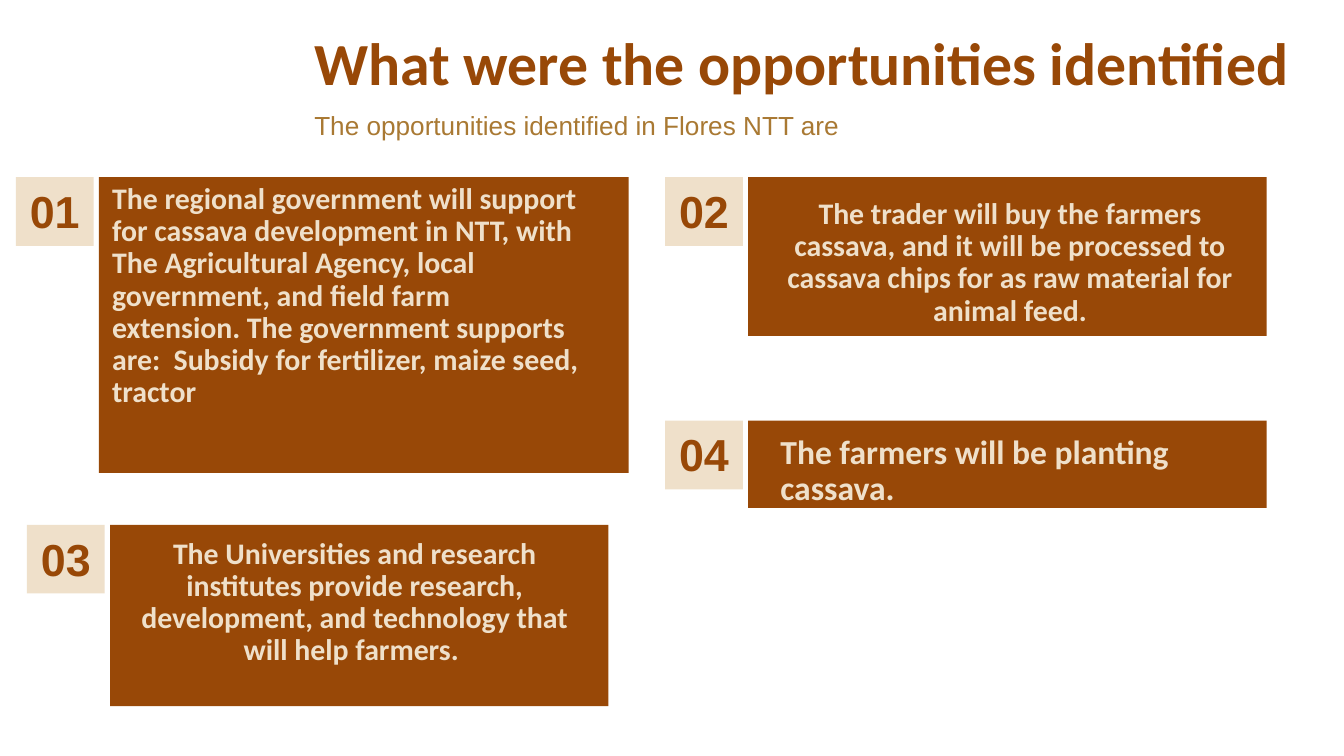
"""Build the slide of opportunities identified in Flores NTT."""
from pptx import Presentation
from pptx.dml.color import RGBColor
from pptx.enum.shapes import MSO_SHAPE
from pptx.enum.text import MSO_ANCHOR, PP_ALIGN
from pptx.util import Cm, Pt

RECTANGLE = MSO_SHAPE.RECTANGLE
MIDDLE, TOP = MSO_ANCHOR.MIDDLE, MSO_ANCHOR.TOP
LEFT, CENTER = PP_ALIGN.LEFT, PP_ALIGN.CENTER
BROWN = RGBColor(0x98, 0x48, 0x07)
CREAM = RGBColor(0xEF, 0xE0, 0xCA)
GOLD = RGBColor(0xA9, 0x79, 0x33)

TITLE = "What were the opportunities identified"
SUBTITLE = "The opportunities identified in Flores NTT are"
BADGE_WIDTH, BADGE_HEIGHT, PANEL_OFFSET = 1.47, 1.3, 1.57

# number, corner, panel size, text offset, text size, alignment, points, wording
CARDS = [
    ("01", (0.3, 3.35), (10.01, 5.59), (0, 0), (9.42, 4.57), LEFT, 16,
     "The regional government will support for cassava development in NTT, "
     "with The Agricultural Agency, local government, and field farm extension. "
     "The government supports are:  Subsidy for fertilizer, maize seed, tractor"),
    ("02", (12.57, 3.35), (9.8, 3), (0.15, 0.28), (9.6, 2.72), CENTER, 16,
     "The trader will buy the farmers cassava, and it will be processed to "
     "cassava chips for as raw material for animal feed."),
    ("03", (0.51, 9.92), (9.42, 3.43), (0, 0.13), (9.25, 2.72), CENTER, 16,
     "The Universities and research institutes provide research, development, "
     "and technology that will help farmers. "),
    ("04", (12.57, 7.95), (9.8, 1.65), (0.36, 0.15), (9.6, 1.65), LEFT, 18,
     "The farmers will be planting cassava."),
]


def write(shape, text, font, size, color, bold=True, align=LEFT, anchor=TOP, spacing=1.0):
    frame = shape.text_frame
    frame.word_wrap = True
    frame.vertical_anchor = anchor
    frame.text = text
    para = frame.paragraphs[0]
    para.alignment = align
    para.line_spacing = spacing
    para.space_before = Pt(0)
    para.font.name = font
    para.font.size = Pt(size)
    para.font.bold = bold
    para.font.color.rgb = color


def add_block(slide, left, top, width, height, color):
    block = slide.shapes.add_shape(RECTANGLE, Cm(left), Cm(top), Cm(width), Cm(height))
    block.shadow.inherit = False
    block.fill.solid()
    block.fill.fore_color.rgb = color
    block.line.fill.background()
    return block


def add_card(slide, number, corner, panel_size, text_offset, text_size, align, points, text):
    left, top = corner
    panel_left = left + PANEL_OFFSET
    add_block(slide, panel_left, top, *panel_size, BROWN)
    badge = add_block(slide, left, top, BADGE_WIDTH, BADGE_HEIGHT, CREAM)
    write(badge, number, "Arial", 24, BROWN, align=CENTER)
    box = slide.shapes.add_textbox(
        Cm(panel_left + text_offset[0]), Cm(top + text_offset[1]),
        Cm(text_size[0]), Cm(text_size[1]))
    write(box, text, "Calibri", points, CREAM, align=align, spacing=0.9)


def main():
    deck = Presentation()
    deck.slide_width, deck.slide_height = Cm(25.4), Cm(14.29)
    slide = deck.slides.add_slide(deck.slide_layouts[5])

    title = slide.shapes.title
    title.left, title.top, title.width, title.height = Cm(5.69), Cm(0.36), Cm(19.71), Cm(1.6)
    write(title, TITLE, "Calibri", 32, BROWN, anchor=MIDDLE)
    subtitle = slide.shapes.add_textbox(Cm(5.69), Cm(1.96), Cm(19.71), Cm(0.79))
    write(subtitle, SUBTITLE, "Arial", 14, GOLD, bold=False, anchor=MIDDLE)

    for card in CARDS:
        add_card(slide, *card)
    deck.save("out.pptx")


if __name__ == "__main__":
    main()
